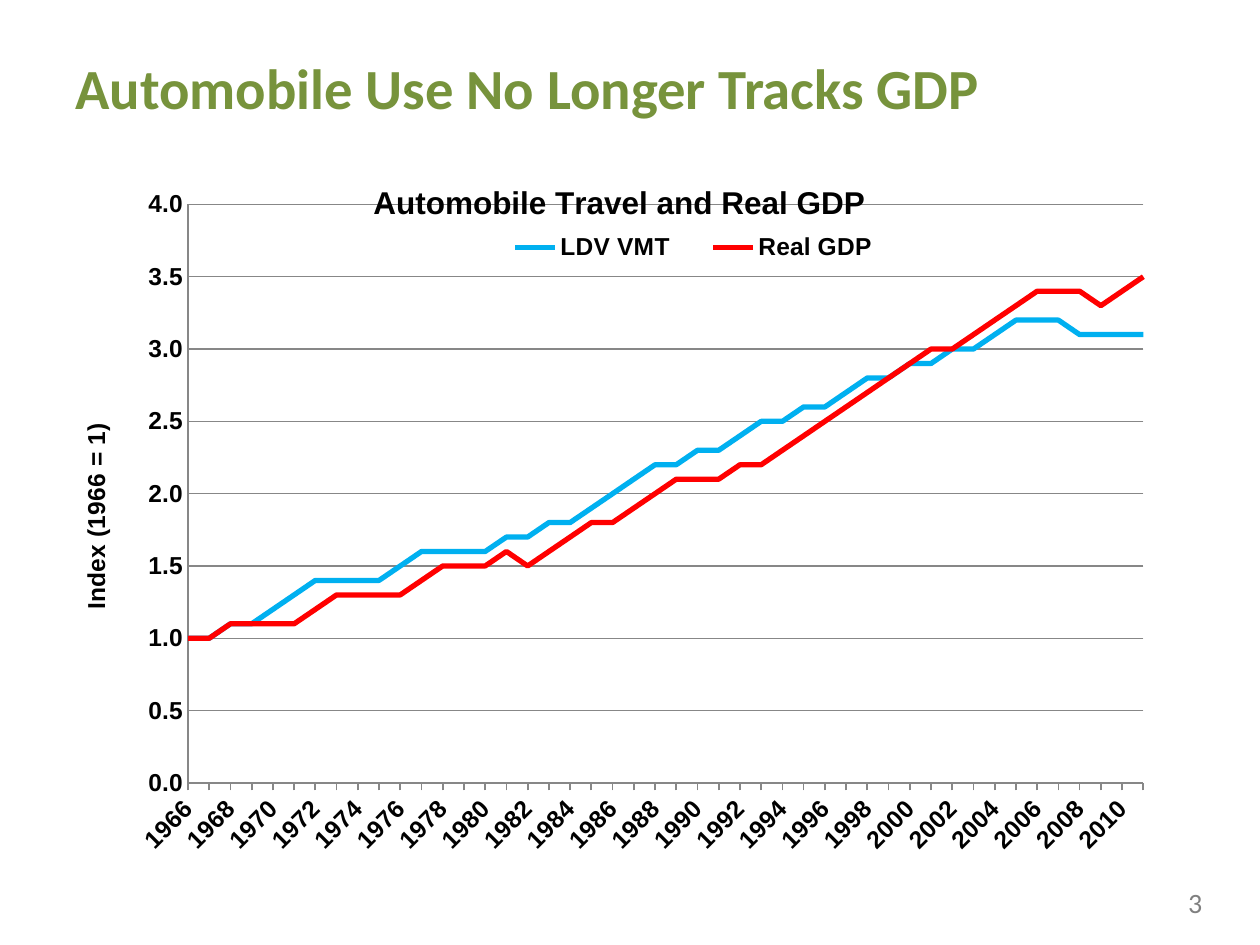
from dataclasses import dataclass

from lxml.etree import SubElement
from pptx import Presentation
from pptx.chart.data import CategoryChartData
from pptx.dml.color import RGBColor
from pptx.enum.chart import XL_CHART_TYPE, XL_LEGEND_POSITION, XL_TICK_MARK
from pptx.enum.text import MSO_ANCHOR
from pptx.oxml import parse_xml
from pptx.oxml.ns import nsdecls, qn
from pptx.util import Cm, Pt

FIRST_YEAR, LAST_YEAR = 1966, 2011
AXIS_GRAY = "878787"


@dataclass(frozen=True)
class IndexSeries:
    name: str
    color: str
    values: tuple[float, ...]


SERIES = (
    IndexSeries("LDV VMT", "00B0F0", (
        1, 1, 1.1, 1.1, 1.2, 1.3, 1.4, 1.4, 1.4, 1.4, 1.5, 1.6,
        1.6, 1.6, 1.6, 1.7, 1.7, 1.8, 1.8, 1.9, 2, 2.1, 2.2, 2.2,
        2.3, 2.3, 2.4, 2.5, 2.5, 2.6, 2.6, 2.7, 2.8, 2.8, 2.9, 2.9,
        3, 3, 3.1, 3.2, 3.2, 3.2, 3.1, 3.1, 3.1, 3.1)),
    IndexSeries("Real GDP", "FF0000", (
        1, 1, 1.1, 1.1, 1.1, 1.1, 1.2, 1.3, 1.3, 1.3, 1.3, 1.4,
        1.5, 1.5, 1.5, 1.6, 1.5, 1.6, 1.7, 1.8, 1.8, 1.9, 2, 2.1,
        2.1, 2.1, 2.2, 2.2, 2.3, 2.4, 2.5, 2.6, 2.7, 2.8, 2.9, 3,
        3, 3.1, 3.2, 3.3, 3.4, 3.4, 3.4, 3.3, 3.4, 3.5)),
)


def color(hex_string: str) -> RGBColor:
    return RGBColor.from_string(hex_string)


def format_font(font, size: float, hex_color="000000", name="Arial", bold=True) -> None:
    font.size, font.name, font.bold = Pt(size), name, bold
    font.color.rgb = color(hex_color)


def format_line(line, hex_color: str, width: float) -> None:
    line.color.rgb = color(hex_color)
    line.width = Pt(width)


def add_text(slide, text: str, left, top, width, height, *, anchor=MSO_ANCHOR.TOP,
             wrap=True, **font_format) -> None:
    frame = slide.shapes.add_textbox(left, top, width, height).text_frame
    frame.word_wrap = wrap
    frame.vertical_anchor = anchor
    paragraph = frame.paragraphs[0]
    paragraph.text = text
    format_font(paragraph.runs[0].font, **font_format)


def set_title(owner, text: str, size: float):
    """Give a chart or an axis a title and return its XML element."""
    title = owner.chart_title if hasattr(owner, "chart_title") else owner.axis_title
    paragraph = title.text_frame.paragraphs[0]
    paragraph.text = text
    format_font(paragraph.runs[0].font, size)
    return title._element


def place(element, index: int, **fractions: float) -> None:
    """Set a manual layout, in fractions of the chart, as the child at index."""
    for old_layout in element.findall(qn("c:layout")):
        element.remove(old_layout)
    layout = parse_xml(f"<c:layout {nsdecls('c')}><c:manualLayout/></c:layout>")
    manual = layout[0]
    if element.tag == qn("c:plotArea"):
        SubElement(manual, qn("c:layoutTarget")).set("val", "inner")
    for side in ("x", "y"):
        SubElement(manual, qn(f"c:{side}Mode")).set("val", "edge")
    for side, fraction in fractions.items():
        SubElement(manual, qn(f"c:{side}")).set("val", str(fraction))
    element.insert(index, layout)


def format_axes(chart) -> None:
    category_axis, value_axis = chart.category_axis, chart.value_axis
    for axis in (category_axis, value_axis):
        format_font(axis.tick_labels.font, 14)
        format_line(axis.format.line, AXIS_GRAY, 1)
        axis.minor_tick_mark = XL_TICK_MARK.NONE

    category_axis.major_tick_mark = XL_TICK_MARK.OUTSIDE
    category_element = category_axis._element
    category_element.find(qn("c:txPr")).find(qn("a:bodyPr")).set("rot", "-2700000")
    last_child = category_element.find(qn("c:noMultiLvlLbl"))
    for tag, step in (("tickLblSkip", 2), ("tickMarkSkip", 1)):
        last_child.addprevious(parse_xml(f'<c:{tag} {nsdecls("c")} val="{step}"/>'))

    value_axis.major_tick_mark = XL_TICK_MARK.NONE
    value_axis.minimum_scale, value_axis.maximum_scale = 0, 4
    value_axis.major_unit = 0.5
    value_axis.tick_labels.number_format = "#,##0.0"
    value_axis.tick_labels.number_format_is_linked = False
    value_axis.has_major_gridlines = True
    format_line(value_axis.major_gridlines.format.line, AXIS_GRAY, 0.75)
    value_element = value_axis._element
    for old_crossing in value_element.findall(qn("c:crossBetween")):
        value_element.remove(old_crossing)
    value_element.find(qn("c:crosses")).addnext(
        parse_xml(f'<c:crossBetween {nsdecls("c")} val="midCat"/>'))
    title = set_title(value_axis, "Index (1966 = 1)", 14)
    next(title.iter(qn("a:bodyPr"))).set("rot", "-5400000")
    place(title, 1, x=0.02, y=0.38)


def add_index_chart(slide) -> None:
    data = CategoryChartData(number_format="0.0")
    data.categories = [str(year) for year in range(FIRST_YEAR, LAST_YEAR + 1)]
    for series in SERIES:
        data.add_series(series.name, series.values)
    chart = slide.shapes.add_chart(
        XL_CHART_TYPE.LINE, Cm(1.07), Cm(2.97), Cm(22.66), Cm(14.4), data).chart
    format_font(chart.font, 10, name="Calibri", bold=False)
    chart.plots[0].vary_by_categories = False
    for plotted, series in zip(chart.plots[0].series, SERIES):
        plotted.smooth = False
        format_line(plotted.format.line, series.color, 3)

    place(set_title(chart, "Automobile Travel and Real GDP", 18), 1, x=0.28, y=0.04)
    chart.has_legend = True
    chart.legend.position = XL_LEGEND_POSITION.TOP
    chart.legend.include_in_layout = True
    format_font(chart.legend.font, 14)
    place(chart.legend._element, 1, x=0.38, y=0.11, w=0.38, h=0.06)
    format_axes(chart)
    plot_area = chart._chartSpace.chart.plotArea
    place(plot_area, 0, x=0.12, y=0.08, w=0.85, h=0.81)


def main() -> None:
    presentation = Presentation()
    presentation.slide_width, presentation.slide_height = Cm(25.4), Cm(19.05)
    slide = presentation.slides.add_slide(presentation.slide_layouts[6])
    add_text(slide, "3", Cm(23.7), Cm(17.73), Cm(1.27), Cm(0.94), wrap=False,
             size=16, hex_color="808080", name="Calibri", bold=False)
    add_text(slide, "Automobile Use No Longer Tracks GDP",
             Cm(1.27), Cm(0.76), Cm(22.86), Cm(1.98), anchor=MSO_ANCHOR.MIDDLE,
             size=32.4, hex_color="77933C", name="Calibri")
    add_index_chart(slide)
    presentation.save("out.pptx")


if __name__ == "__main__":
    main()
